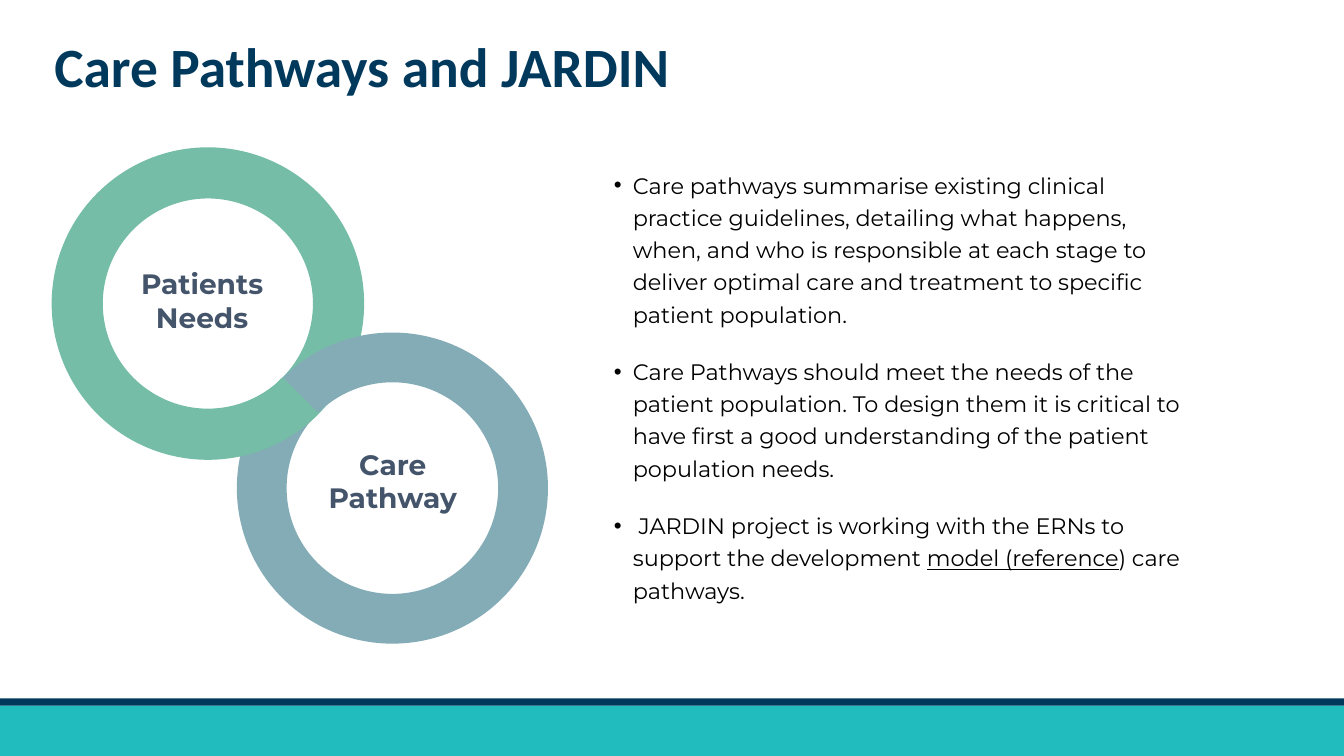
import math
from dataclasses import dataclass

from lxml import etree
from pptx import Presentation
from pptx import util as u
from pptx.dml import color
from pptx.enum import shapes, text
from pptx.oxml import ns

HUES = {
    "navy": "00395C",
    "teal": "21BDBE",
    "green": "75BDA7",
    "blue": "84ACB6",
    "slate": "44546A",
    "black": "000000",
}
RADIUS = 3.92
BAND = 0.16


@dataclass
class Bar:
    top: float
    height: float
    hue: str


@dataclass
class Ring:
    x: float
    y: float
    hue: str
    edge: bool


@dataclass
class Label:
    words: str
    left: float
    top: float
    width: float


BARS = [Bar(17.78, 1.27, "teal"), Bar(17.6, 0.18, "navy")]
NEEDS = Ring(5.24, 7.65, "green", True)
CARE = Ring(9.89, 12.3, "blue", False)
LABELS = [
    Label("Patients Needs", 2.62, 6.58, 4.95),
    Label("Care Pathway", 7.32, 11.13, 5.16),
]
POINTS = [
    [("Care pathways summarise existing clinical practice guidelines, detailing "
      "what happens, when, and who is responsible at each stage to deliver optimal "
      "care and treatment to specific patient population.", False)],
    [("Care Pathways should meet the needs of the patient population. To design "
      "them it is critical to have first a good understanding of the patient "
      "population needs.", False)],
    [(" JARDIN project is working with the ERNs to support the development ", False),
     ("model (reference", True),
     (") care pathways.", False)],
]


def rgb(hue: str) -> color.RGBColor:
    return color.RGBColor.from_string(HUES[hue])


def paint(shape, hue: str, edge: bool = False) -> None:
    shape.shadow.inherit = False
    shape.fill.solid()
    shape.fill.fore_color.rgb = rgb(hue)
    if edge:
        shape.line.color.rgb = rgb(hue)
        shape.line.width = u.Pt(1)
    else:
        shape.line.fill.background()


def add_bar(slide, bar: Bar) -> None:
    shape = slide.shapes.add_shape(
        shapes.MSO_SHAPE.RECTANGLE, 0, u.Cm(bar.top), u.Cm(33.87), u.Cm(bar.height))
    paint(shape, bar.hue)


def add_ring(slide, ring: Ring) -> None:
    shape = slide.shapes.add_shape(
        shapes.MSO_SHAPE.DONUT, u.Cm(ring.x - RADIUS), u.Cm(ring.y - RADIUS),
        u.Cm(2 * RADIUS), u.Cm(2 * RADIUS))
    shape.adjustments[0] = BAND
    paint(shape, ring.hue, ring.edge)


def trace(ring: Ring, start: int, stop: int) -> list[tuple[int, int]]:
    step = 1 if stop > start else -1
    turns = [math.radians(a) for a in range(start, stop + step, step)]
    return [(u.Cm(ring.x + RADIUS * math.cos(t)), u.Cm(ring.y + RADIUS * math.sin(t)))
            for t in turns]


def add_link(slide, front: Ring, back: Ring) -> None:
    dots = trace(front, 78, 45) + trace(back, 225, 192)
    form = slide.shapes.build_freeform(*dots[0], scale=1.0)
    form.add_line_segments(dots[1:], close=True)
    paint(form.convert_to_shape(), front.hue, front.edge)


def add_dot(para) -> None:
    props = para._p.get_or_add_pPr()
    props.set("marL", str(u.Cm(0.48)))
    props.set("indent", str(-u.Cm(0.48)))
    etree.SubElement(props, ns.qn("a:buFont")).set("typeface", "Arial")
    etree.SubElement(props, ns.qn("a:buChar")).set("char", "•")


def add_text(slide, paras: list, left: float, top: float, width: float, height: float,
             *, size: float, hue: str, font: str = "Montserrat", bold: bool = False,
             align=text.PP_ALIGN.LEFT, anchor=text.MSO_ANCHOR.BOTTOM,
             pads: tuple[float, float] = (0.25, 0.13), lead: float = 1.0,
             after: float = 0, dots: bool = False) -> None:
    frame = slide.shapes.add_textbox(
        u.Cm(left), u.Cm(top), u.Cm(width), u.Cm(height)).text_frame
    frame.word_wrap = True
    frame.vertical_anchor = anchor
    frame.margin_left = frame.margin_right = u.Cm(pads[0])
    frame.margin_top = frame.margin_bottom = u.Cm(pads[1])
    for i, runs in enumerate(paras):
        para = frame.add_paragraph() if i else frame.paragraphs[0]
        if dots:
            add_dot(para)
        para.alignment = align
        para.line_spacing = lead
        para.space_after = u.Pt(after)
        for words, under in runs:
            run = para.add_run()
            run.text = words
            run.font.name = font
            run.font.size = u.Pt(size)
            run.font.bold = bold
            run.font.underline = under
            run.font.color.rgb = rgb(hue)


def main() -> None:
    deck = Presentation()
    deck.slide_width, deck.slide_height = u.Cm(33.87), u.Cm(19.05)
    slide = deck.slides.add_slide(deck.slide_layouts[6])
    for bar in BARS:
        add_bar(slide, bar)
    for ring in (NEEDS, CARE):
        add_ring(slide, ring)
    add_link(slide, NEEDS, CARE)
    add_text(slide, [[("Care Pathways and JARDIN", False)]], 1.12, 0.79, 23.37, 1.93,
             size=39.6, hue="navy", font="Calibri", bold=True, lead=0.9,
             anchor=text.MSO_ANCHOR.MIDDLE)
    add_text(slide, POINTS, 15.34, 4.09, 14.66, 11.2, size=16, hue="black",
             pads=(0.13, 0.08), lead=1.2, after=18, dots=True)
    for label in LABELS:
        add_text(slide, [[(label.words, False)]], label.left, label.top, label.width,
                 1.96, size=20, hue="slate", bold=True, align=text.PP_ALIGN.CENTER)
    deck.save("out.pptx")


if __name__ == "__main__":
    main()
